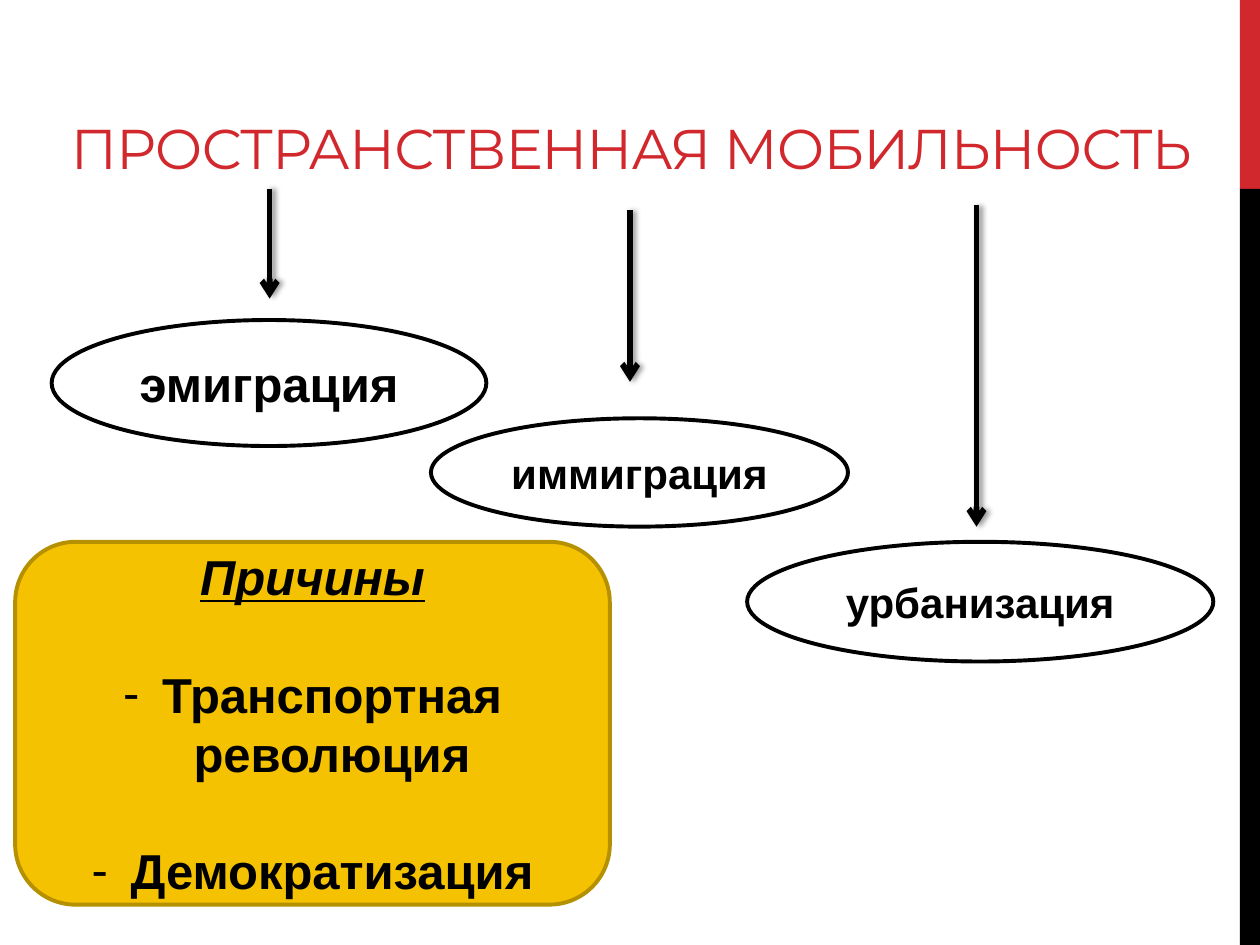
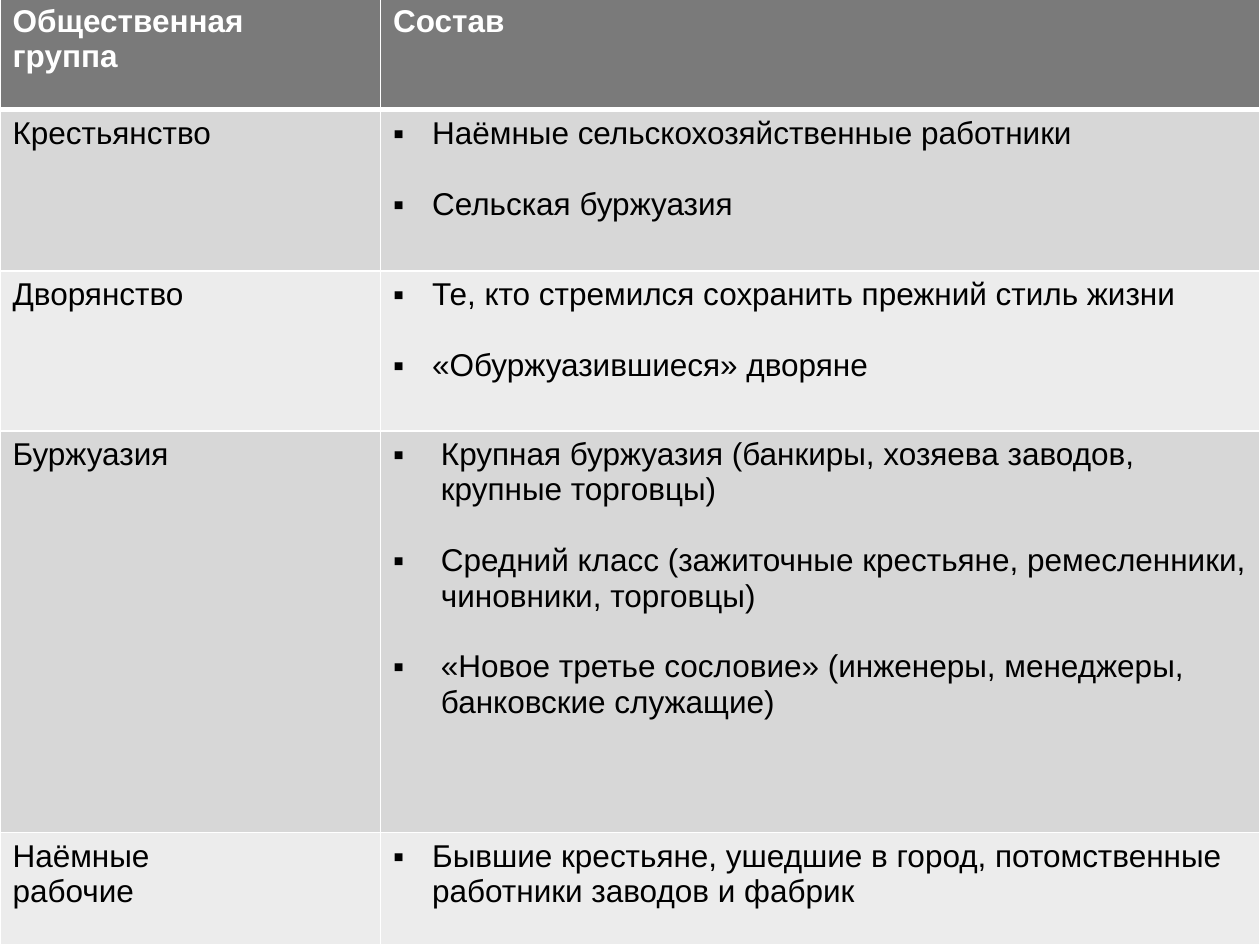
"""Build two slides on spatial mobility and social groups."""
from dataclasses import dataclass

from lxml.etree import SubElement
from pptx import Presentation
from pptx.dml.color import RGBColor
from pptx.enum.shapes import MSO_CONNECTOR, MSO_SHAPE
from pptx.enum.text import MSO_ANCHOR, PP_ALIGN
from pptx.oxml.ns import qn
from pptx.util import Inches, Pt

COLORS = {
    "red": "D1282E", "black": "000000", "white": "FFFFFF",
    "gold": "F5C201", "gold_edge": "B59001",
    "header": "7A7A7A", "band_dark": "D7D7D7", "band_light": "ECECEC",
}
BODY_FONT = "Arial"
TITLE_FONT = "Montserrat"


@dataclass
class Style:
    size: int
    color: str = "black"
    font: str = BODY_FONT
    bold: bool = False
    italic: bool = False
    underline: bool = False
    align: PP_ALIGN = PP_ALIGN.LEFT


@dataclass
class Bullet:
    char: str
    indent: float


@dataclass
class Para:
    text: str
    style: Style
    bullet: Bullet | None = None
    gap: float = 0


@dataclass
class Box:
    left: float
    top: float
    width: float
    height: float

    def lengths(self) -> tuple:
        return tuple(Inches(v) for v in (self.left, self.top, self.width, self.height))


@dataclass
class Arrow:
    x: float
    top: float
    bottom: float


@dataclass
class Oval:
    text: str
    size: int
    box: Box


@dataclass
class Group:
    names: list[str]
    members: list[str]
    height: float
    indent: float = 0.31


ARROWS = [Arrow(2.14, 1.5, 2.37), Arrow(7.75, 1.63, 4.18), Arrow(5, 1.67, 3.03)]
OVALS = [
    Oval("эмиграция", 28, Box(0.41, 2.54, 3.45, 1)),
    Oval("иммиграция", 24, Box(3.42, 3.32, 3.31, 0.86)),
    Oval("урбанизация", 24, Box(5.93, 4.3, 3.7, 0.95)),
]
CAUSES = ["Транспортная революция", "Демократизация"]
GROUPS = [
    Group(["Крестьянство"],
          ["Наёмные сельскохозяйственные работники", "Сельская буржуазия"], 1.28),
    Group(["Дворянство"],
          ["Те, кто стремился сохранить прежний стиль жизни",
           "«Обуржуазившиеся» дворяне"], 1.27),
    Group(["Буржуазия"],
          ["Крупная буржуазия (банкиры, хозяева заводов, крупные торговцы)",
           "Средний класс (зажиточные крестьяне, ремесленники, чиновники, торговцы)",
           "«Новое третье сословие» (инженеры, менеджеры, банковские служащие)"],
          3.19, 0.38),
    Group(["Наёмные", "рабочие"],
          ["Бывшие крестьяне, ушедшие в город, потомственные работники заводов и фабрик"],
          0.89),
]


def rgb(name: str) -> RGBColor:
    return RGBColor.from_string(COLORS[name])


def write(tf, paras: list[Para]) -> None:
    for i, para in enumerate(paras):
        p = tf.paragraphs[0] if i == 0 else tf.add_paragraph()
        p.alignment = para.style.align
        p.space_before = Pt(para.gap)
        if para.bullet:
            pPr = p._p.get_or_add_pPr()
            indent = Inches(para.bullet.indent)
            pPr.set("marL", str(indent))
            pPr.set("indent", str(-indent))
            SubElement(pPr, qn("a:buFont"), typeface=BODY_FONT)
            SubElement(pPr, qn("a:buChar"), char=para.bullet.char)
        r = p.add_run()
        r.text = para.text
        f = r.font
        f.name, f.size = para.style.font, Pt(para.style.size)
        f.bold, f.italic = para.style.bold, para.style.italic
        f.underline = para.style.underline
        f.color.rgb = rgb(para.style.color)


def bullet_list(texts: list[str], style: Style, bullet: Bullet, gap: float,
                first_gap: float = 0) -> list[Para]:
    return [Para(t, style, bullet, gap if i else first_gap) for i, t in enumerate(texts)]


def add_box(s, kind: MSO_SHAPE, box: Box, fill: str, line: str | None = None,
            paras: list[Para] | None = None) -> None:
    sp = s.shapes.add_shape(kind, *box.lengths())
    sp.shadow.inherit = False
    sp.fill.solid()
    sp.fill.fore_color.rgb = rgb(fill)
    if line:
        sp.line.color.rgb = rgb(line)
        sp.line.width = Pt(2.25)
    else:
        sp.line.fill.background()
    if paras:
        tf = sp.text_frame
        tf.word_wrap = True
        tf.vertical_anchor = MSO_ANCHOR.MIDDLE
        write(tf, paras)


def add_side_band(s) -> None:
    for color, top, height in (("red", 0, 1.5), ("black", 1.5, 6)):
        add_box(s, MSO_SHAPE.RECTANGLE, Box(9.84, top, 0.16, height), color)


def add_title(s, text: str) -> None:
    sp = s.shapes.add_textbox(*Box(0, 0.67, 10.02, 0.81).lengths())
    tf = sp.text_frame
    tf.word_wrap = True
    tf.vertical_anchor = MSO_ANCHOR.BOTTOM
    write(tf, [Para(text, Style(32, "red", TITLE_FONT, align=PP_ALIGN.CENTER))])
    tf.paragraphs[0].runs[0]._r.get_or_add_rPr().set("spc", "-60")


def add_arrow(s, arrow: Arrow) -> None:
    x = Inches(arrow.x)
    sp = s.shapes.add_connector(MSO_CONNECTOR.STRAIGHT, x, Inches(arrow.top),
                                x, Inches(arrow.bottom))
    sp.line.color.rgb = rgb("black")
    sp.line.width = Pt(3.25)
    SubElement(sp.line._get_or_add_ln(), qn("a:tailEnd"), type="arrow")
    effects = SubElement(sp._element.spPr, qn("a:effectLst"))
    shadow = SubElement(effects, qn("a:outerShdw"), blurRad=str(Pt(3.1)),
                        dist=str(Pt(1.8)), dir="0", rotWithShape="0")
    color = SubElement(shadow, qn("a:srgbClr"), val=COLORS["black"])
    SubElement(color, qn("a:alpha"), val="40000")


def style_cell(cell, fill: str, paras: list[Para], top: float, bottom: float) -> None:
    tcPr = cell._tc.get_or_add_tcPr()
    for side, width in (("L", 1), ("R", 1), ("T", top), ("B", bottom)):
        ln = SubElement(tcPr, qn(f"a:ln{side}"), w=str(Pt(width)))
        solid = SubElement(ln, qn("a:solidFill"))
        SubElement(solid, qn("a:srgbClr"), val=COLORS["white"])
    cell.fill.solid()
    cell.fill.fore_color.rgb = rgb(fill)
    write(cell.text_frame, paras)


def build_mobility(s) -> None:
    add_title(s, "ПРОСТРАНСТВЕННАЯ МОБИЛЬНОСТЬ")
    for arrow in ARROWS:
        add_arrow(s, arrow)
    for oval in OVALS:
        style = Style(oval.size, bold=True, align=PP_ALIGN.CENTER)
        add_box(s, MSO_SHAPE.OVAL, oval.box, "white", "black", [Para(oval.text, style)])
    heading = Style(28, bold=True, italic=True, underline=True, align=PP_ALIGN.CENTER)
    cause = Style(28, bold=True, align=PP_ALIGN.CENTER)
    paras = [Para("Причины", heading)]
    paras += bullet_list(CAUSES, cause, Bullet("-", 0.31), 33.6, 33.6)
    add_box(s, MSO_SHAPE.ROUNDED_RECTANGLE, Box(0.12, 4.3, 4.72, 2.88),
            "gold", "gold_edge", paras)


def build_groups(s) -> None:
    frame = s.shapes.add_table(len(GROUPS) + 1, 2, *Box(0, -0.02, 10, 7.52).lengths())
    table = frame.table
    for column, width in zip(table.columns, (3.02, 6.98)):
        column.width = Inches(width)
    for row, height in zip(table.rows, [0.89] + [g.height for g in GROUPS]):
        row.height = Inches(height)
    head, body = Style(18, "white", bold=True), Style(18)
    for col, lines in enumerate((["Общественная", "группа"], ["Состав"])):
        style_cell(table.cell(0, col), "header", [Para(t, head) for t in lines], 1, 3)
    for i, group in enumerate(GROUPS, start=1):
        fill = "band_dark" if i % 2 else "band_light"
        names = [Para(t, body) for t in group.names]
        members = bullet_list(group.members, body, Bullet("▪", group.indent), 20.3)
        for col, paras in enumerate((names, members)):
            style_cell(table.cell(i, col), fill, paras, 3 if i == 1 else 1, 1)


def main() -> None:
    prs = Presentation()
    prs.slide_width, prs.slide_height = Inches(10), Inches(7.5)
    for build in (build_mobility, build_groups):
        s = prs.slides.add_slide(prs.slide_layouts[6])
        add_side_band(s)
        build(s)
    prs.save("out.pptx")


if __name__ == "__main__":
    main()
